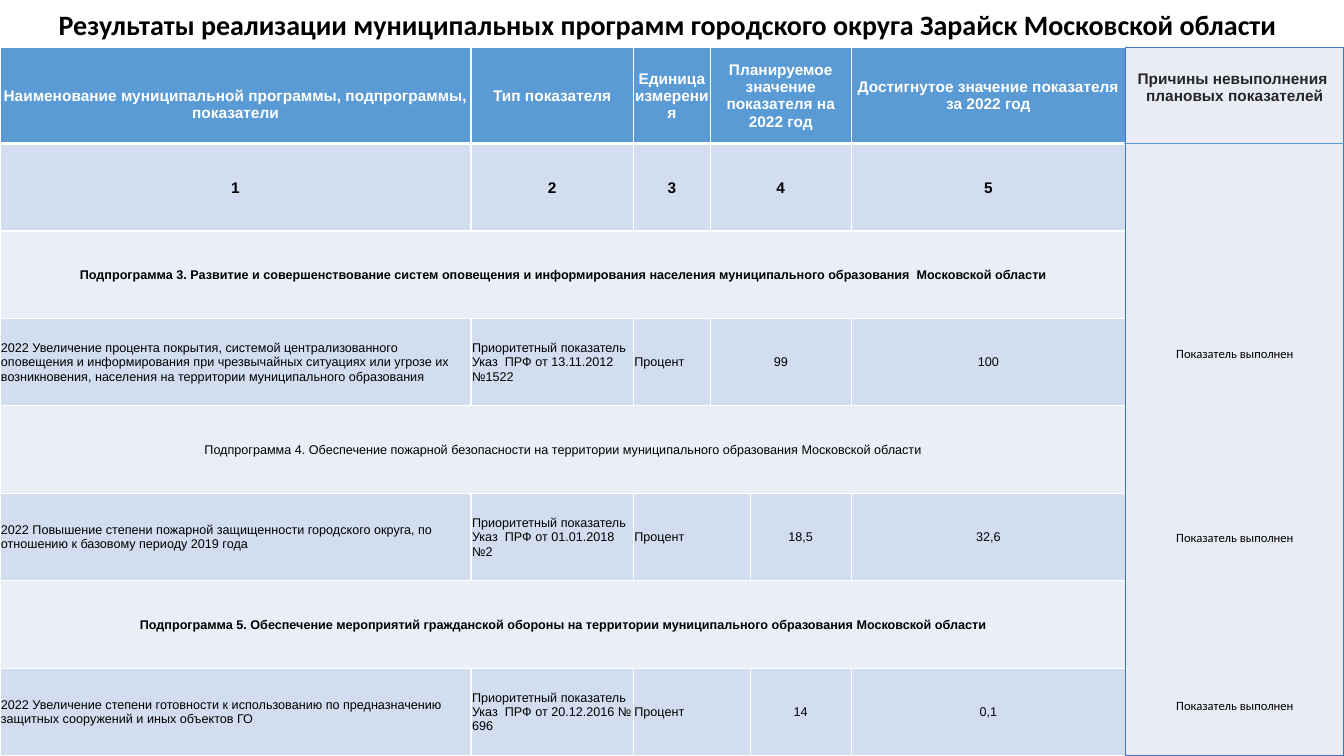
from lxml import etree
from pptx import Presentation
from pptx.dml.color import RGBColor
from pptx.enum.shapes import MSO_CONNECTOR
from pptx.enum.text import MSO_ANCHOR, PP_ALIGN
from pptx.oxml.ns import qn
from pptx.util import Pt

LEFT, CENTER = PP_ALIGN.LEFT, PP_ALIGN.CENTER
MIDDLE, TOP = MSO_ANCHOR.MIDDLE, MSO_ANCHOR.TOP
STRAIGHT = MSO_CONNECTOR.STRAIGHT

# Content: each cell is (text, columns spanned)
TITLE = "Результаты реализации муниципальных программ городского округа Зарайск Московской области"
HEADER = [
    ("Наименование муниципальной программы, подпрограммы, показатели", 1),
    ("Тип показателя", 1),
    ("Единица измерения", 1),
    ("Планируемое значение показателя на 2022 год", 2),
    ("Достигнутое значение показателя за 2022 год", 1),
]
NUMBERS = [("1", 1), ("2", 1), ("3", 1), ("4", 2), ("5", 1)]
ROWS = [
    ("header", HEADER),
    ("numbers", NUMBERS),
    ("program bold", [("Подпрограмма 3. Развитие и совершенствование систем оповещения и информирования населения муниципального образования  Московской области", 6)]),
    ("indicator", [
        ("2022 Увеличение процента покрытия, системой централизованного оповещения и информирования при чрезвычайных ситуациях или угрозе их возникновения, населения на территории муниципального образования", 1),
        ("Приоритетный показатель Указ  ПРФ от 13.11.2012 №1522", 1),
        ("Процент", 1), ("99", 2), ("100", 1)]),
    ("program", [("Подпрограмма 4. Обеспечение пожарной безопасности на территории муниципального образования Московской области", 6)]),
    ("indicator", [
        ("2022 Повышение степени пожарной защищенности городского округа, по отношению к базовому периоду 2019 года", 1),
        ("Приоритетный показатель Указ  ПРФ от 01.01.2018 №2", 1),
        ("Процент", 2), ("18,5", 1), ("32,6", 1)]),
    ("program bold", [("Подпрограмма 5. Обеспечение мероприятий гражданской обороны на территории муниципального образования Московской области", 6)]),
    ("indicator", [
        ("2022 Увеличение степени готовности к использованию по предназначению защитных сооружений и иных объектов ГО", 1),
        ("Приоритетный показатель Указ  ПРФ от 20.12.2016 № 696", 1),
        ("Процент", 2), ("14", 1), ("0,1", 1)]),
]
# Row kind: fill, text colour, size, bold
STYLES = {
    "header": ("5B9BD5", "FFFFFF", 11, True),
    "numbers": ("D2DEEF", "000000", 11, True),
    "program bold": ("EAEFF7", "000000", 9, True),
    "program": ("EAEFF7", "000000", 9, False),
    "indicator": ("D2DEEF", "000000", 9, False),
}
REASON_HEADER = "Причины невыполнения  плановых показателей"
DONE = "Показатель выполнен"
DONE_GAPS = [172.5, 120.5, 109]

# Layout in points
PAGE_WIDTH, PAGE_HEIGHT = 960, 540
TABLE_TOP = 34
COLUMN_WIDTHS = [336.5, 116, 55, 28.5, 72, 196]
HEADER_HEIGHT, ROW_HEIGHT = 68.5, 62.5
REASON_LEFT = sum(COLUMN_WIDTHS)
CELL_INSET = 0.7
TEXT_COLUMNS = 3


def color(value):
    return RGBColor.from_string(value)


def format_paragraph(para, font, size, ink, bold, align):
    para.alignment = align
    for span in para.runs:
        span.font.name = font
        span.font.size = Pt(size)
        span.font.bold = bold
        span.font.color.rgb = color(ink)


def paint_cell(cell, fill, border, bottom_width=1):
    properties = cell._tc.get_or_add_tcPr()
    for side in ("lnL", "lnR", "lnT", "lnB"):
        width = bottom_width if side == "lnB" else 1
        line = etree.SubElement(properties, qn("a:" + side), w=str(Pt(width)))
        solid = etree.SubElement(line, qn("a:solidFill"))
        etree.SubElement(solid, qn("a:srgbClr"), val=border)
    cell.fill.solid()
    cell.fill.fore_color.rgb = color(fill)


def add_plain_table(page, left, widths, heights):
    frame = page.shapes.add_table(len(heights), len(widths), Pt(left), Pt(TABLE_TOP),
                                  Pt(sum(widths)), Pt(sum(heights)))
    table = frame.table
    table.first_row = table.horz_banding = False
    for column, width in zip(table.columns, widths):
        column.width = Pt(width)
    for row, height in zip(table.rows, heights):
        row.height = Pt(height)
    return table


def add_title(page):
    box = page.shapes.add_textbox(Pt(-6), Pt(1.5), Pt(966), Pt(31.5))
    box.text_frame.word_wrap = True
    box.text_frame.text = TITLE
    format_paragraph(box.text_frame.paragraphs[0], "Calibri", 20, "000000", True, CENTER)


def add_results(page):
    heights = [HEADER_HEIGHT] + [ROW_HEIGHT] * (len(ROWS) - 1)
    table = add_plain_table(page, 0, COLUMN_WIDTHS, heights)
    for row, (kind, entries) in enumerate(ROWS):
        fill, ink, size, bold = STYLES[kind]
        for column in range(len(COLUMN_WIDTHS)):
            paint_cell(table.cell(row, column), fill, "FFFFFF", 3 if kind == "header" else 1)
        column = 0
        for text, columns in entries:
            cell = table.cell(row, column)
            if columns > 1:
                cell.merge(table.cell(row, column + columns - 1))
            cell.text_frame.text = text
            cell.vertical_anchor = MIDDLE
            cell.margin_left = cell.margin_right = cell.margin_top = Pt(CELL_INSET)
            cell.margin_bottom = Pt(0)
            is_text = kind == "indicator" and column < TEXT_COLUMNS
            format_paragraph(cell.text_frame.paragraphs[0], "Arial", size, ink, bold,
                             LEFT if is_text else CENTER)
            column += columns
    # The first heading sits one line lower than its neighbours
    table.cell(0, 0).margin_top = Pt(13.5)


def add_reasons(page):
    table = add_plain_table(page, REASON_LEFT, [PAGE_WIDTH - REASON_LEFT],
                            [PAGE_HEIGHT - TABLE_TOP])
    cell = table.cell(0, 0)
    paint_cell(cell, "E9EBF5", "4472C4")
    cell.vertical_anchor = TOP
    cell.margin_top = Pt(16.5)
    cell.text_frame.text = REASON_HEADER
    format_paragraph(cell.text_frame.paragraphs[0], "Arial", 11, "262626", True, CENTER)
    for gap in DONE_GAPS:
        para = cell.text_frame.add_paragraph()
        para.text = DONE
        para.space_before = Pt(gap)
        format_paragraph(para, "Calibri", 9, "000000", False, CENTER)


def add_header_rule(page):
    height = Pt(TABLE_TOP + HEADER_HEIGHT)
    rule = page.shapes.add_connector(STRAIGHT, Pt(REASON_LEFT - 1), height, Pt(PAGE_WIDTH), height)
    rule.line.color.rgb = color("5B9BD5")
    rule.line.width = Pt(0.5)
    etree.SubElement(rule._element.spPr, qn("a:effectLst"))


def main():
    deck = Presentation()
    deck.slide_width, deck.slide_height = Pt(PAGE_WIDTH), Pt(PAGE_HEIGHT)
    page = deck.slides.add_slide(deck.slide_layouts[6])
    add_title(page)
    add_results(page)
    add_reasons(page)
    add_header_rule(page)
    deck.save("out.pptx")


if __name__ == "__main__":
    main()
